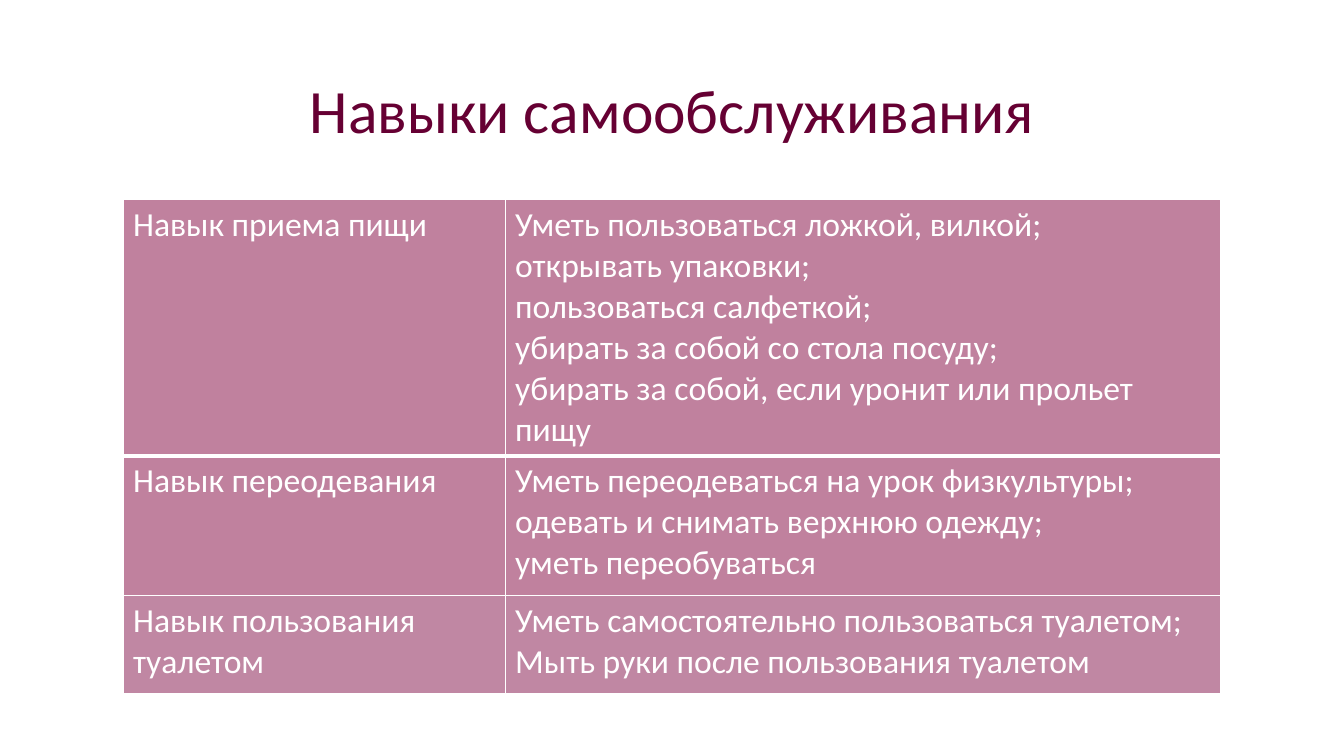
from dataclasses import dataclass

from lxml.etree import SubElement
from pptx import Presentation
from pptx.dml.color import RGBColor
from pptx.enum.text import MSO_ANCHOR, PP_ALIGN
from pptx.oxml.ns import qn
from pptx.util import Emu, Pt

PX = 9144  # EMU per px, 100 px to the inch
FONT = "Calibri"
WHITE = RGBColor(0xFF, 0xFF, 0xFF)
PLUM = RGBColor(0x66, 0x00, 0x33)
ROSE = RGBColor(0xC0, 0x81, 0x9E)
PALE_ROSE = RGBColor(0xC0, 0x87, 0xA3)
THIN, THICK = Pt(1), Pt(3)


@dataclass
class Skill:
    name: str
    abilities: list[str]
    height: int
    fill: RGBColor
    top_line: int = THIN
    bottom_line: int = THIN


SKILLS = [
    Skill("Навык приема пищи",
          ["Уметь пользоваться ложкой, вилкой;",
           "открывать упаковки;",
           "пользоваться салфеткой;",
           "убирать за собой со стола посуду;",
           "убирать за собой, если уронит или прольет пищу"],
          254, ROSE, bottom_line=THICK),
    Skill("Навык переодевания",
          ["Уметь переодеваться на урок физкультуры;",
           "одевать и снимать верхнюю одежду;",
           "уметь переобуваться"],
          139, ROSE, top_line=THICK),
    Skill("Навык пользования туалетом",
          ["Уметь самостоятельно пользоваться туалетом;",
           "Мыть руки после пользования туалетом"],
          97, PALE_ROSE),
]
COLUMN_WIDTHS = [379, 710]


def px(length: int) -> Emu:
    return Emu(length * PX)


def add_borders(cell, top: int, bottom: int) -> None:
    properties = cell._tc.get_or_add_tcPr()
    for side, width in (("L", THIN), ("R", THIN), ("T", top), ("B", bottom)):
        border = SubElement(properties, qn(f"a:ln{side}"), w=str(int(width)))
        border_fill = SubElement(border, qn("a:solidFill"))
        SubElement(border_fill, qn("a:srgbClr"), val=str(WHITE))


def fill_cell(cell, lines: list[str], skill: Skill) -> None:
    add_borders(cell, skill.top_line, skill.bottom_line)
    cell.fill.solid()
    cell.fill.fore_color.rgb = skill.fill
    cell.text = "\n".join(lines)
    for paragraph in cell.text_frame.paragraphs:
        paragraph.font.name = FONT
        paragraph.font.size = Pt(24)
        paragraph.font.bold = False
        paragraph.font.color.rgb = WHITE


def add_title(slide, text: str) -> None:
    title = slide.shapes.title
    title.left, title.top, title.width, title.height = map(px, (92, 40, 1150, 145))
    title.text_frame.text = text
    title.text_frame.vertical_anchor = MSO_ANCHOR.MIDDLE
    heading = title.text_frame.paragraphs[0]
    heading.alignment = PP_ALIGN.CENTER
    heading.line_spacing = 0.9
    heading.font.name = FONT
    heading.font.size = Pt(44)
    heading.font.color.rgb = PLUM


def add_skills_table(slide, skills: list[Skill]) -> None:
    table = slide.shapes.add_table(
        len(skills), len(COLUMN_WIDTHS), px(122), px(198),
        px(sum(COLUMN_WIDTHS)), px(sum(skill.height for skill in skills))).table
    for column, width in zip(table.columns, COLUMN_WIDTHS):
        column.width = px(width)
    for row, skill in zip(table.rows, skills):
        row.height = px(skill.height)
        for cell, lines in zip(row.cells, ([skill.name], skill.abilities)):
            fill_cell(cell, lines, skill)


def main() -> None:
    presentation = Presentation()
    presentation.slide_width, presentation.slide_height = px(1333), px(750)
    slide = presentation.slides.add_slide(presentation.slide_layouts[5])
    add_title(slide, "Навыки самообслуживания")
    add_skills_table(slide, SKILLS)
    presentation.save("out.pptx")


if __name__ == "__main__":
    main()
